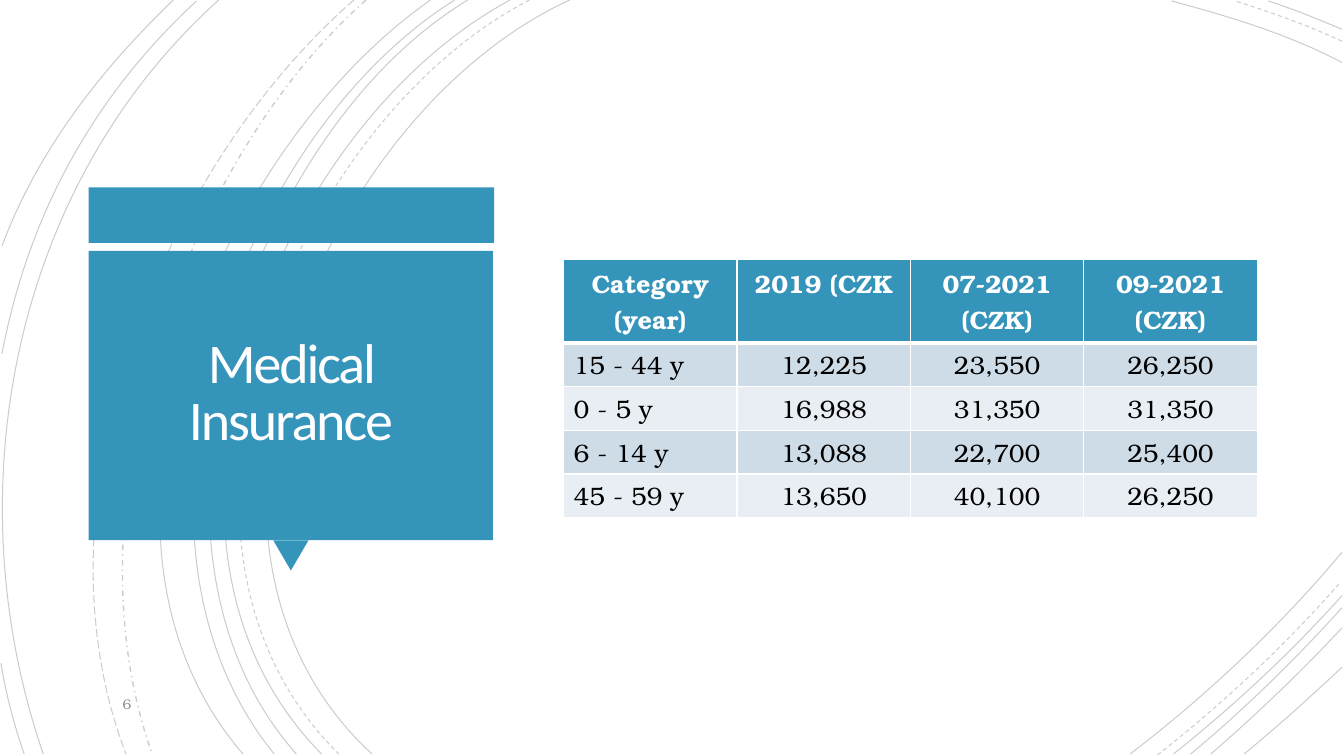
import pptx
import pptx.util
import pptx.dml.color
import pptx.enum.dml
import pptx.enum.shapes
import pptx.enum.text
import pptx.oxml.ns
from lxml import etree

Inches = pptx.util.Inches
Pt = pptx.util.Pt
RGBColor = pptx.dml.color.RGBColor
Dash = pptx.enum.dml.MSO_LINE
Shape = pptx.enum.shapes.MSO_SHAPE
Align = pptx.enum.text.PP_ALIGN
Anchor = pptx.enum.text.MSO_ANCHOR
qn = pptx.oxml.ns.qn

TEAL = RGBColor(0x34, 0x94, 0xBA)
TITLE_WHITE = RGBColor(0xFF, 0xFE, 0xFF)
WHITE = RGBColor(0xFF, 0xFF, 0xFF)
BLACK = RGBColor(0, 0, 0)
GREY = RGBColor(0x8C, 0x8C, 0x8C)
BAND_DARK = RGBColor(0xCE, 0xDC, 0xE7)
BAND_LIGHT = RGBColor(0xE8, 0xEE, 0xF3)
TITLE_FONT = "Calibri"
BODY_FONT = "TeX Gyre Bonum"

TITLE = "Medical Insurance"
PAGE_NUMBER = "6"
INSURANCE_ROWS = [
    ("Category (year)", "2019 (CZK", "07-2021 (CZK)", "09-2021 (CZK)"),
    ("15 - 44 y", "12,225", "23,550", "26,250"),
    ("0 - 5 y", "16,988", "31,350", "31,350"),
    ("6 - 14 y", "13,088", "22,700", "25,400"),
    ("45 - 59 y", "13,650", "40,100", "26,250"),
]
COLUMN_WIDTH, ROW_HEIGHT = 1.72, 0.41

# Each arc: start, two control points and end in inches
SOLID_ARCS = [
    ((5.65, 0), (3.15, 1.15), (1.43, 5.4), (3.69, 7.48)),
    ((13.31, 0.62), (12.78, 0.34), (12.18, 0.16), (11.62, 0.01)),
    ((11.21, 7.48), (11.97, 6.9), (12.69, 6.22), (13.31, 5.48)),
    ((5.06, 0), (2.7, 1.27), (1.1, 5.37), (3.19, 7.48)),
    ((13.31, 0.29), (13.07, 0.19), (12.83, 0.09), (12.58, 0.01)),
    ((11.64, 7.48), (12.23, 7.01), (12.8, 6.48), (13.31, 5.91)),
    ((4.64, 0), (2.44, 1.33), (1.1, 5.41), (2.94, 7.48)),
    ((11.81, 7.48), (12.34, 7.04), (12.84, 6.55), (13.31, 6.03)),
    ((4.51, 0), (2.31, 1.38), (0.97, 5.33), (2.72, 7.48)),
    ((12.01, 7.48), (12.46, 7.09), (12.9, 6.67), (13.31, 6.23)),
    ((4.27, 0), (2.17, 1.47), (0.53, 5.29), (2.41, 7.48)),
    ((12.34, 7.48), (12.67, 7.21), (12.99, 6.92), (13.31, 6.62)),
    ((2.17, 0), (0.11, 1.85), (-0.46, 4.9), (0.43, 7.48)),
    ((1.95, 0.01), (0.92, 0.96), (0.28, 2.14), (0.02, 3.51)),
    ((0.01, 6.58), (0.06, 6.89), (0.14, 7.19), (0.24, 7.48)),
    ((1.72, 0), (1, 0.69), (0.37, 1.5), (0.02, 2.44)),
]
DASHED_ARCS = [
    ((5.25, 0), (2.85, 1.25), (1.23, 5.37), (3.36, 7.48)),
    ((13.31, 0.41), (12.97, 0.25), (12.6, 0.12), (12.25, 0.01)),
    ((11.48, 7.49), (12.13, 6.98), (12.75, 6.4), (13.3, 5.77)),
]
DASH_DOT_ARCS = [((3.63, 0), (1.76, 1.66), (0.65, 5.09), (1.51, 7.48))]
LONG_DASH_ARCS = [((3.51, 0), (1.57, 1.69), (0.29, 4.99), (1.25, 7.48))]
ARC_GROUPS = [
    (SOLID_ARCS, Dash.SOLID, 0.75),
    (DASHED_ARCS, Dash.DASH, 0.75),
    (DASH_DOT_ARCS, Dash.DASH_DOT, 1),
    (LONG_DASH_ARCS, Dash.LONG_DASH, 0.75),
]

TITLE_PANELS = [
    (Shape.RECTANGLE, (0.88, 1.86, 4.02, 0.55), 0),
    (Shape.ISOSCELES_TRIANGLE, (2.71, 5.36, 0.35, 0.3), 180),
    (Shape.RECTANGLE, (0.88, 2.49, 4.01, 2.87), 0),
]


def bend_outline(shape):
    """Turn the three straight segments of a freeform into one Bezier curve."""
    outline = shape._element.find(".//" + qn("a:path"))
    segments = outline.findall(qn("a:lnTo"))
    curve = etree.SubElement(outline, qn("a:cubicBezTo"))
    for segment in segments:
        curve.append(segment[0])
        outline.remove(segment)


def add_arc(shapes, arc, dash, width):
    points = [(Inches(x), Inches(y)) for x, y in arc]
    builder = shapes.build_freeform(*points[0])
    builder.add_line_segments(points[1:], close=False)
    shape = builder.convert_to_shape()
    bend_outline(shape)
    shape.shadow.inherit = False
    shape.fill.background()
    shape.line.color.rgb = BLACK
    shape.line.width = Pt(width)
    shape.line.dash_style = dash
    color = shape.line._get_or_add_ln().find(".//" + qn("a:srgbClr"))
    etree.SubElement(color, qn("a:alpha"), val="20000")


def add_text(paragraph, text, font_name, size, color, bold=False):
    run = paragraph.add_run()
    run.text = text
    run.font.name = font_name
    run.font.size = Pt(size)
    run.font.bold = bold
    run.font.color.rgb = color
    return run


def set_borders(cell, bottom_width):
    properties = cell._tc.get_or_add_tcPr()
    widths = {"a:lnL": 1, "a:lnR": 1, "a:lnT": 1, "a:lnB": bottom_width}
    for index, (tag, width) in enumerate(widths.items()):
        border = etree.Element(qn(tag), w=str(Pt(width)))
        fill = etree.SubElement(border, qn("a:solidFill"))
        etree.SubElement(fill, qn("a:srgbClr"), val=str(WHITE))
        properties.insert(index, border)


def add_title(slide):
    title = slide.shapes.title
    slide.shapes._spTree.append(title._element)  # in front of the panels
    title.left, title.top = Inches(0.97), Inches(2.57)
    title.width, title.height = Inches(3.83), Inches(2.69)
    frame = title.text_frame
    frame.auto_size = pptx.enum.text.MSO_AUTO_SIZE.NONE
    frame.word_wrap = True
    frame.vertical_anchor = Anchor.MIDDLE
    frame.margin_left = frame.margin_right = Inches(0.25)
    frame.margin_top = frame.margin_bottom = Inches(0.25)
    paragraph = frame.paragraphs[0]
    paragraph.alignment = Align.CENTER
    paragraph.line_spacing = 0.85
    run = add_text(paragraph, TITLE, TITLE_FONT, 40, TITLE_WHITE)
    run.font._element.set("spc", "-150")


def add_insurance_table(shapes):
    row_count, column_count = len(INSURANCE_ROWS), len(INSURANCE_ROWS[0])
    table = shapes.add_table(
        row_count, column_count, Inches(5.59), Inches(2.57),
        Inches(COLUMN_WIDTH * column_count), Inches(ROW_HEIGHT * row_count)).table
    for row_index, values in enumerate(INSURANCE_ROWS):
        header = row_index == 0
        band = TEAL if header else BAND_DARK if row_index % 2 else BAND_LIGHT
        for column_index, value in enumerate(values):
            cell = table.cell(row_index, column_index)
            cell.fill.solid()
            cell.fill.fore_color.rgb = band
            set_borders(cell, 3 if header else 1)
            paragraph = cell.text_frame.paragraphs[0]
            centred = header or column_index > 0
            paragraph.alignment = Align.CENTER if centred else Align.LEFT
            add_text(paragraph, value, BODY_FONT, 18, WHITE if header else BLACK, header)


def main():
    presentation = pptx.Presentation()
    presentation.slide_width, presentation.slide_height = Inches(13.33), Inches(7.5)
    slide = presentation.slides.add_slide(presentation.slide_layouts[5])
    shapes = slide.shapes

    for arcs, dash, width in ARC_GROUPS:
        for arc in arcs:
            add_arc(shapes, arc, dash, width)

    for kind, box, rotation in TITLE_PANELS:
        panel = shapes.add_shape(kind, *map(Inches, box))
        panel.rotation = rotation
        panel.shadow.inherit = False
        panel.fill.solid()
        panel.fill.fore_color.rgb = TEAL
        panel.line.fill.background()

    add_title(slide)
    add_insurance_table(shapes)

    number_box = shapes.add_textbox(Inches(0.4), Inches(6.58), Inches(1), Inches(0.8))
    frame = number_box.text_frame
    frame.word_wrap = True
    frame.vertical_anchor = Anchor.MIDDLE
    frame.paragraphs[0].alignment = Align.RIGHT
    add_text(frame.paragraphs[0], PAGE_NUMBER, BODY_FONT, 10, GREY)

    presentation.save("out.pptx")


if __name__ == "__main__":
    main()
